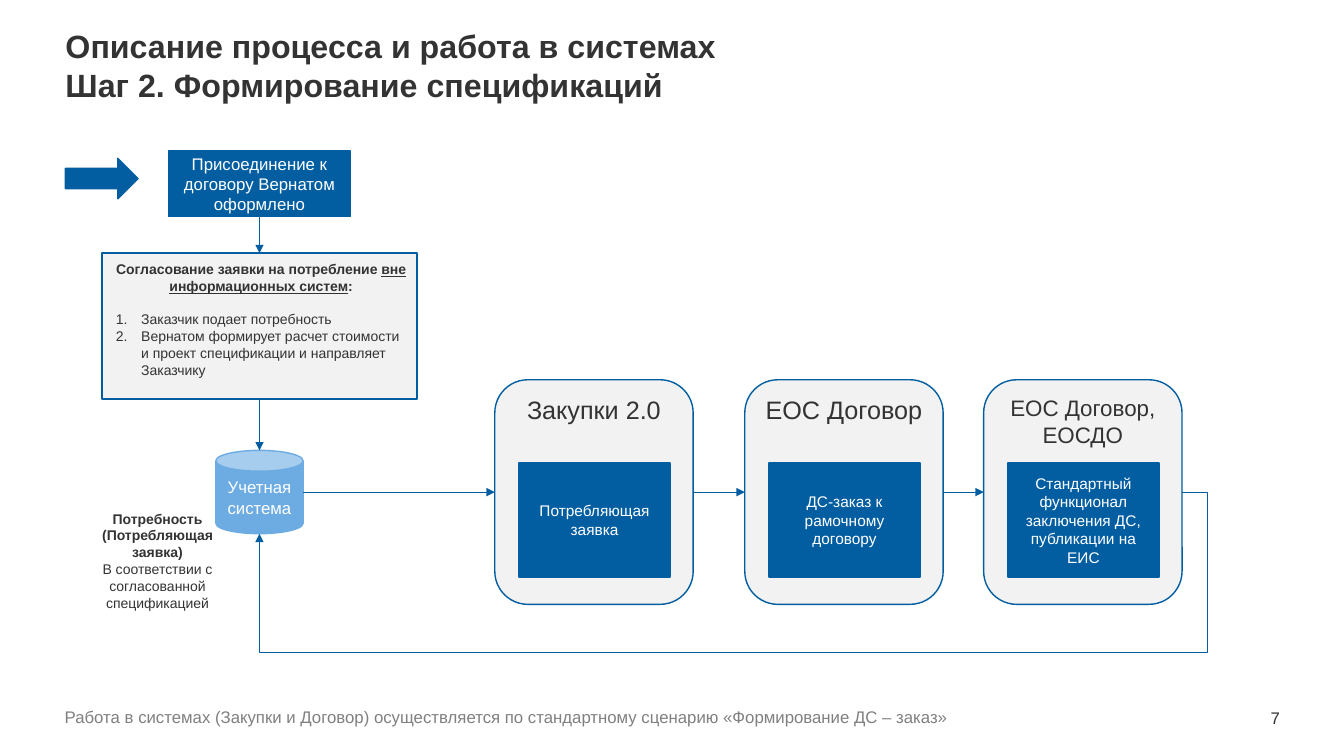
from dataclasses import dataclass

from lxml import etree
from pptx import Presentation
from pptx.dml.color import RGBColor
from pptx.enum.shapes import MSO_CONNECTOR, MSO_SHAPE
from pptx.enum.text import MSO_ANCHOR, MSO_AUTO_SIZE, PP_ALIGN
from pptx.oxml.ns import qn
from pptx.util import Cm, Pt

RECT, ROUND_RECT = MSO_SHAPE.RECTANGLE, MSO_SHAPE.ROUNDED_RECTANGLE
CAN, RIGHT_ARROW = MSO_SHAPE.CAN, MSO_SHAPE.RIGHT_ARROW
STRAIGHT, ELBOW = MSO_CONNECTOR.STRAIGHT, MSO_CONNECTOR.ELBOW
TOP, MIDDLE, BOTTOM = MSO_ANCHOR.TOP, MSO_ANCHOR.MIDDLE, MSO_ANCHOR.BOTTOM
LEFT, CENTER, RIGHT = PP_ALIGN.LEFT, PP_ALIGN.CENTER, PP_ALIGN.RIGHT
NO_AUTOFIT = MSO_AUTO_SIZE.NONE
TOP_SIDE, LEFT_SIDE, BOTTOM_SIDE, RIGHT_SIDE = range(4)
CAN_BOTTOM = 3


@dataclass(frozen=True)
class Theme:
    font: str = "Arial"
    blue: str = "025EA1"
    sky: str = "6CACE3"
    panel: str = "F2F2F2"
    ink: str = "333333"
    muted: str = "808080"
    white: str = "FFFFFF"
    title: int = 23
    system: int = 18
    system_long: int = 16
    body: int = 12
    step: int = 11
    note: int = 10
    outline: float = 1
    link: float = 0.5


def apply(target, formats):
    """Set each attribute named in formats."""
    for attribute, value in formats.items():
        setattr(target, attribute, value)


def set_bullet(paragraph, indent, bullet, **options):
    properties = paragraph._p.get_or_add_pPr()
    properties.set("marL", str(Cm(indent)))
    properties.set("indent", str(-Cm(indent)))
    etree.SubElement(properties, qn(bullet), **options)


class ProcessSlide:
    def __init__(self, presentation, theme):
        self.theme = theme
        self.slide = presentation.slides.add_slide(presentation.slide_layouts[1])

    def set_text(self, shape, paragraphs, size, color, align=CENTER, anchor=MIDDLE,
                 inset=None, bold=False, spacing=1.0):
        """Fill a shape; each paragraph is a list of (text, font overrides)."""
        frame = shape.text_frame
        apply(frame, {"word_wrap": True, "auto_size": NO_AUTOFIT,
                      "vertical_anchor": anchor})
        if inset is not None:
            apply(frame, {f"margin_{side}": Cm(inset)
                          for side in ("left", "top", "right", "bottom")})
        for index, runs in enumerate(paragraphs):
            paragraph = frame.add_paragraph() if index else frame.paragraphs[0]
            apply(paragraph, {"alignment": align, "line_spacing": spacing,
                              "space_before": Pt(0)})
            for text, overrides in runs:
                run = paragraph.add_run()
                run.text = text
                apply(run.font, {"name": self.theme.font, "size": Pt(size),
                                 "bold": bold, **overrides})
                run.font.color.rgb = RGBColor.from_string(color)
        return frame

    def place(self, shape, box):
        apply(shape, dict(zip(("left", "top", "width", "height"), map(Cm, box))))
        return shape

    def title(self, lines, box):
        heading = self.place(self.slide.shapes.title, box)
        self.set_text(heading, [[(line, {})] for line in lines], self.theme.title,
                      self.theme.ink, LEFT, inset=0, bold=True)

    def footer(self, text, box):
        footer = self.place(self.slide.placeholders[1], box)
        set_bullet(footer.text_frame.paragraphs[0], 0, "a:buNone")
        self.set_text(footer, [[(text, {})]], self.theme.body, self.theme.muted,
                      LEFT, BOTTOM, inset=0, spacing=0.9)

    def text(self, paragraphs, box, size, **formats):
        area = self.slide.shapes.add_textbox(*map(Cm, box))
        return self.set_text(area, paragraphs, size, self.theme.ink, **formats)

    def shape(self, kind, box, fill, line, text=None, size=None, color=None, **formats):
        shape = self.slide.shapes.add_shape(kind, *map(Cm, box))
        shape.shadow.inherit = False
        shape.fill.solid()
        shape.fill.fore_color.rgb = RGBColor.from_string(fill)
        shape.line.color.rgb = RGBColor.from_string(line)
        shape.line.width = Pt(self.theme.outline)
        if text:
            self.set_text(shape, [[(text, {})]], size, color or self.theme.white,
                          **formats)
        return shape

    def link(self, start, end, source=None, target=None, kind=STRAIGHT):
        """Draw an arrow; source and target are optional (shape, side) joints."""
        arrow = self.slide.shapes.add_connector(kind, *map(Cm, (*start, *end)))
        if source:
            arrow.begin_connect(*source)
        if target:
            arrow.end_connect(*target)
        arrow.line.color.rgb = RGBColor.from_string(self.theme.blue)
        arrow.line.width = Pt(self.theme.link)
        properties = arrow.element.spPr
        etree.SubElement(properties.find(qn("a:ln")), qn("a:tailEnd"), type="triangle")
        etree.SubElement(properties, qn("a:effectLst"))
        return arrow

    def return_link(self, start, end, source, target, reach, drop):
        """Lead an arrow right by reach, down by drop and back up to its end."""
        arrow = self.link(start, end, source, target, ELBOW)
        apply(arrow, {"end_x": Cm(end[0]), "end_y": Cm(end[1])})
        geometry = arrow.element.spPr.find(qn("a:prstGeom"))
        geometry.set("prst", "bentConnector4")
        guides = geometry.find(qn("a:avLst"))
        if guides is None:
            guides = etree.SubElement(geometry, qn("a:avLst"))
        ratios = (-reach / (start[0] - end[0]), drop / (end[1] - start[1]))
        for number, ratio in enumerate(ratios, 1):
            etree.SubElement(guides, qn("a:gd"), name=f"adj{number}",
                             fmla=f"val {round(ratio * 100000)}")


def main():
    presentation = Presentation()
    apply(presentation, {"slide_width": Cm(33.87), "slide_height": Cm(19.05)})
    theme = Theme()
    page = ProcessSlide(presentation, theme)
    axis_x, axis_y = 6.54, 12.4

    page.title(["Описание процесса и работа в системах",
                "Шаг 2. Формирование спецификаций"], (1.65, 0.64, 22.78, 2))
    page.footer("Работа в системах (Закупки и Договор) осуществляется по стандартному "
                "сценарию «Формирование ДС – заказ»", (1.63, 17.91, 28.6, 0.41))
    page.text([[("7", {})]], (30.99, 17.73, 1.27, 0.61), theme.body,
              align=RIGHT, anchor=BOTTOM, inset=0, spacing=0.9)

    page.shape(RIGHT_ARROW, (1.65, 3.99, 1.83, 1.02), theme.blue, theme.blue)
    joined = page.shape(RECT, (axis_x - 2.3, 3.81, 4.6, 1.65), theme.blue, theme.blue,
                        "Присоединение к договору Вернатом оформлено", theme.body)
    approval = page.shape(RECT, (axis_x - 3.97, 6.38, 7.94, 3.68), theme.panel, theme.blue)
    approval_text = page.text([
        [("Согласование заявки на потребление ", {"bold": True}),
         ("вне информационных систем", {"bold": True, "underline": True}),
         (":", {"bold": True})],
        [("Заказчик подает потребность", {})],
        [("Вернатом формирует расчет стоимости и проект спецификации "
          "и направляет Заказчику", {})],
    ], (2.67, 6.45, 7.82, 3.25), theme.note, anchor=TOP)
    approval_steps = approval_text.paragraphs[1:]
    for approval_step in approval_steps:
        set_bullet(approval_step, 0.64, "a:buAutoNum", type="arabicPeriod")
        approval_step.alignment = LEFT
    approval_steps[0].space_before = Pt(11.5)

    accounting = page.shape(CAN, (axis_x - 1.1, axis_y - 1.05, 2.2, 2.1), theme.sky,
                            theme.sky, "Учетная система", theme.body)
    page.text([[("Потребность (Потребляющая заявка)", {"bold": True})],
               [("В соответствии с согласованной спецификацией", {})]],
              (1.9, 12.73, 4.14, 2.82), theme.note, anchor=TOP)

    page.link((axis_x, 5.46), (axis_x, 6.38), (joined, BOTTOM_SIDE), (approval, TOP_SIDE))
    page.link((axis_x, 10.06), (axis_x, axis_y - 1.05), (approval, BOTTOM_SIDE))

    systems = [
        (12.47, "Закупки 2.0", theme.system, "Потребляющая заявка"),
        (18.77, "ЕОС Договор", theme.system, "ДС-заказ к рамочному договору"),
        (24.79, "ЕОС Договор, ЕОСДО", theme.system_long,
         "Стандартный функционал заключения ДС, публикации на ЕИС"),
    ]
    previous, previous_right = None, axis_x + 1.1
    for left, system, size, step in systems:
        card = page.shape(ROUND_RECT, (left, axis_y - 2.83, 5, 5.66), theme.panel,
                          theme.blue, system, size, theme.ink, anchor=TOP)
        page.shape(RECT, (left + 0.61, 11.67, 3.81, 2.87), theme.blue, theme.blue,
                   step, theme.step)
        page.link((previous_right, axis_y), (left, axis_y),
                  previous and (previous, RIGHT_SIDE), (card, LEFT_SIDE))
        previous, previous_right = card, left + 5

    page.return_link((previous_right, axis_y), (axis_x, axis_y + 1.05),
                     (previous, RIGHT_SIDE), (accounting, CAN_BOTTOM), 0.64, 4.03)
    presentation.save("out.pptx")


if __name__ == "__main__":
    main()
